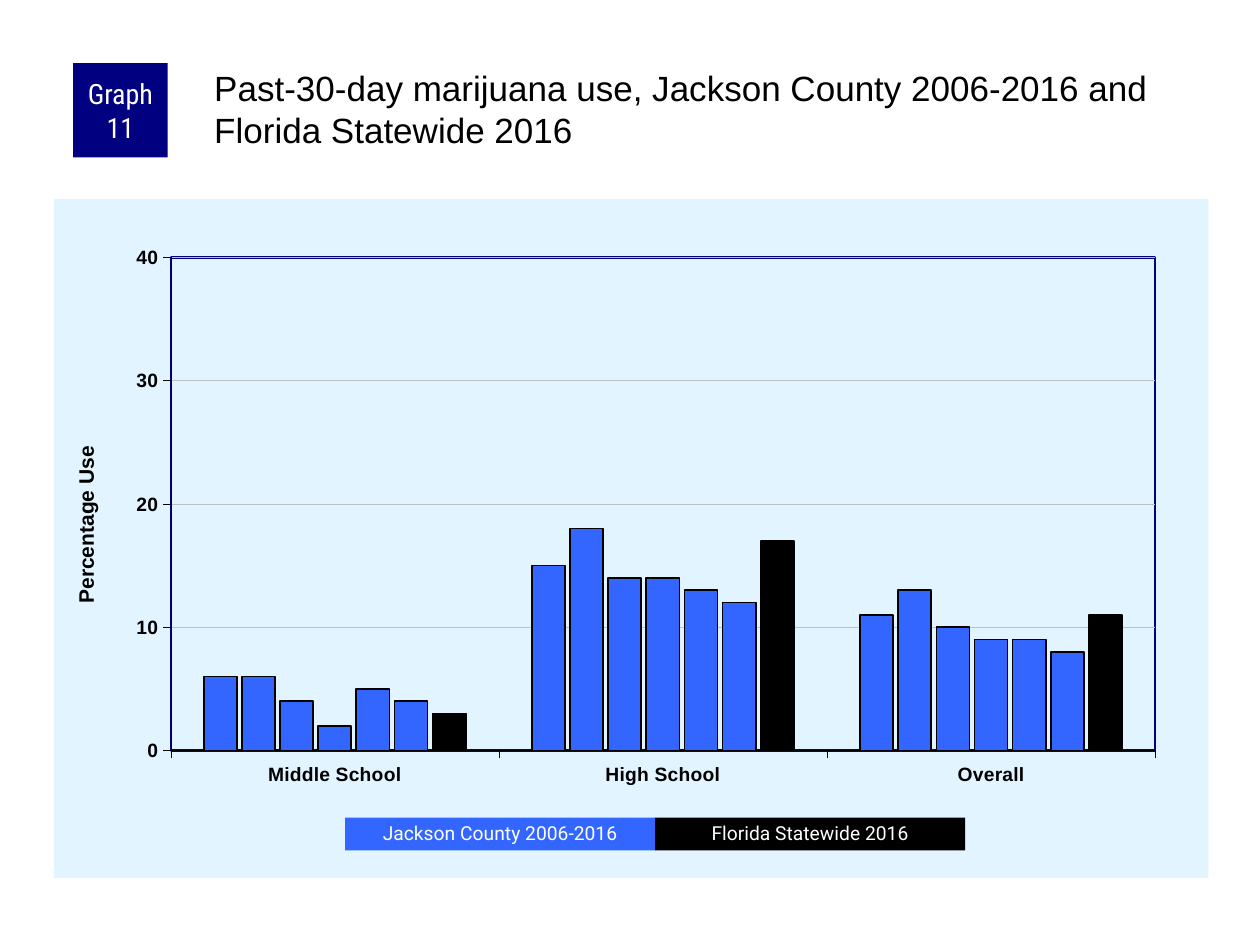
from lxml import etree
from pptx import Presentation
from pptx.chart.data import CategoryChartData
from pptx.dml.color import RGBColor
from pptx.enum.chart import XL_CHART_TYPE as ChartType, XL_TICK_MARK as TickMark
from pptx.enum.shapes import MSO_SHAPE as Preset
from pptx.enum.text import MSO_ANCHOR as Anchor, PP_ALIGN as Align
from pptx.oxml import parse_xml
from pptx.oxml.ns import nsdecls, qn
from pptx.util import Inches, Pt

NAVY, BLUE, BLACK, WHITE = "000080", "3366FF", "000000", "FFFFFF"
PALE_BLUE, GREY = "E1F4FF", "C0C0C0"

LEVELS = ["Middle School", "High School", "Overall"]
COUNTY_USE = [
    (6, 15, 11),
    (6, 18, 13),
    (4, 14, 10),
    (2, 14, 9),
    (5, 13, 9),
    (4, 12, 8),
]
STATE_USE = (3, 17, 11)


def color(hex_value):
    return RGBColor.from_string(hex_value)


def set_font(font, size, fill=BLACK, name="Arial", bold=False):
    font.size, font.name, font.bold = Pt(size), name, bold
    font.color.rgb = color(fill)


def set_line(line, fill, width):
    line.color.rgb = color(fill)
    line.width = Pt(width)


def write(frame, text, size=11, fill=BLACK, font="Arial", bold=False,
          align=Align.LEFT, anchor=Anchor.TOP, spacing=None, margins=None):
    frame.word_wrap = True
    frame.vertical_anchor = anchor
    if margins:
        (frame.margin_left, frame.margin_top,
         frame.margin_right, frame.margin_bottom) = map(Inches, margins)
    paragraph = frame.paragraphs[0]
    paragraph.alignment = align
    paragraph.line_spacing = spacing
    run = paragraph.add_run()
    run.text = text
    set_font(run.font, size, fill, font, bold)


def area_format(fill=None, line=None, width=1):
    element = parse_xml(f"<c:spPr {nsdecls('c', 'a')}/>")
    for parent, value in ((element, fill), ("ln", line)):
        if parent == "ln":
            parent = etree.SubElement(element, qn("a:ln"), w=str(Pt(width)))
        if value:
            solid = etree.SubElement(parent, qn("a:solidFill"))
            etree.SubElement(solid, qn("a:srgbClr"), val=value)
        else:
            etree.SubElement(parent, qn("a:noFill"))
    return element


def manual_layout(parent, position, **settings):
    for old in parent.findall(qn("c:layout")):
        parent.remove(old)
    layout = parse_xml(f"<c:layout {nsdecls('c')}><c:manualLayout/></c:layout>")
    for tag, value in settings.items():
        etree.SubElement(layout[0], qn(f"c:{tag}"), val=value)
    for tag, value in zip("xywh", position):
        etree.SubElement(layout[0], qn(f"c:{tag}"), val=str(value))
    text = parent.find(qn("c:tx"))
    parent.insert(0 if text is None else parent.index(text) + 1, layout)


class GraphSlide:
    def __init__(self, presentation):
        self.slide = presentation.slides.add_slide(presentation.slide_layouts[6])

    def text(self, box, text, **style):
        shape = self.slide.shapes.add_textbox(*map(Inches, box))
        write(shape.text_frame, text, **style)

    def block(self, box, text, fill, **style):
        shape = self.slide.shapes.add_shape(Preset.RECTANGLE, *map(Inches, box))
        shape.shadow.inherit = False
        shape.fill.solid()
        shape.fill.fore_color.rgb = color(fill)
        shape.line.fill.background()
        write(shape.text_frame, text, fill=WHITE, align=Align.CENTER,
              anchor=Anchor.MIDDLE, **style)

    def axis(self, axis):
        axis.major_tick_mark = TickMark.OUTSIDE
        axis.minor_tick_mark = TickMark.NONE
        set_font(axis.tick_labels.font, 11, bold=True)
        set_line(axis.format.line, BLACK, 0.25)

    def column_chart(self, box, categories, series, value_title):
        data = CategoryChartData(number_format="0")
        data.categories = categories
        for number, (values, _) in enumerate(series, 1):
            data.add_series(f"Series {number}", values)
        chart = self.slide.shapes.add_chart(
            ChartType.COLUMN_CLUSTERED, *map(Inches, box), data).chart
        chart.has_title = chart.has_legend = False
        set_font(chart.font, 8)

        plot = chart.plots[0]
        plot.gap_width, plot.overlap = 200, -15
        plot.vary_by_categories = False
        for bars, (_, fill) in zip(plot.series, series):
            bars.format.fill.solid()
            bars.format.fill.fore_color.rgb = color(fill)
            set_line(bars.format.line, BLACK, 1)

        self.axis(chart.category_axis)
        value_axis = chart.value_axis
        self.axis(value_axis)
        value_axis.minimum_scale, value_axis.maximum_scale = 0, 40
        value_axis.major_unit = 10
        value_axis.has_major_gridlines = True
        set_line(value_axis.major_gridlines.format.line, GREY, 0.25)
        title = value_axis.axis_title
        write(title.text_frame, value_title, size=12, bold=True)
        title.text_frame._txBody.bodyPr.set("rot", "-5400000")
        title.text_frame._txBody.bodyPr.set("vert", "horz")
        manual_layout(title._element, (0.013, 0.358), xMode="edge", yMode="edge")

        chart_element = chart._chartSpace.chart
        chart_element.addnext(area_format(PALE_BLUE))
        plot_area = chart_element.plotArea
        manual_layout(plot_area, (0.101, 0.086, 0.853, 0.726),
                      layoutTarget="inner", xMode="edge", yMode="edge")
        plot_area.append(area_format(line=NAVY, width=1.25))


def main():
    presentation = Presentation()
    presentation.slide_width, presentation.slide_height = Inches(10), Inches(7.5)
    page = GraphSlide(presentation)

    series = [(values, BLUE) for values in COUNTY_USE] + [(STATE_USE, BLACK)]
    page.column_chart((0.43, 1.58, 9.16, 5.39), LEVELS, series, "Percentage Use")
    page.block((0.58, 0.5, 0.75, 0.75), "Graph 11", NAVY, size=16,
               font="Roboto Condensed", margins=(0.05, 0, 0.05, 0))
    page.text((1.67, 0.5, 7.92, 0.83),
              "Past-30-day marijuana use, Jackson County 2006-2016 "
              "and Florida Statewide 2016",
              size=20, margins=(0.03, 0.03, 0, 0))

    key_left, key_width = 2.74, 2.46
    keys = [("Jackson County 2006-2016", BLUE), ("Florida Statewide 2016", BLACK)]
    for index, (label, fill) in enumerate(keys):
        page.block((key_left + index * key_width, 6.49, key_width, 0.26),
                   label, fill, font="Roboto", spacing=0.9)

    presentation.save("out.pptx")


if __name__ == "__main__":
    main()
